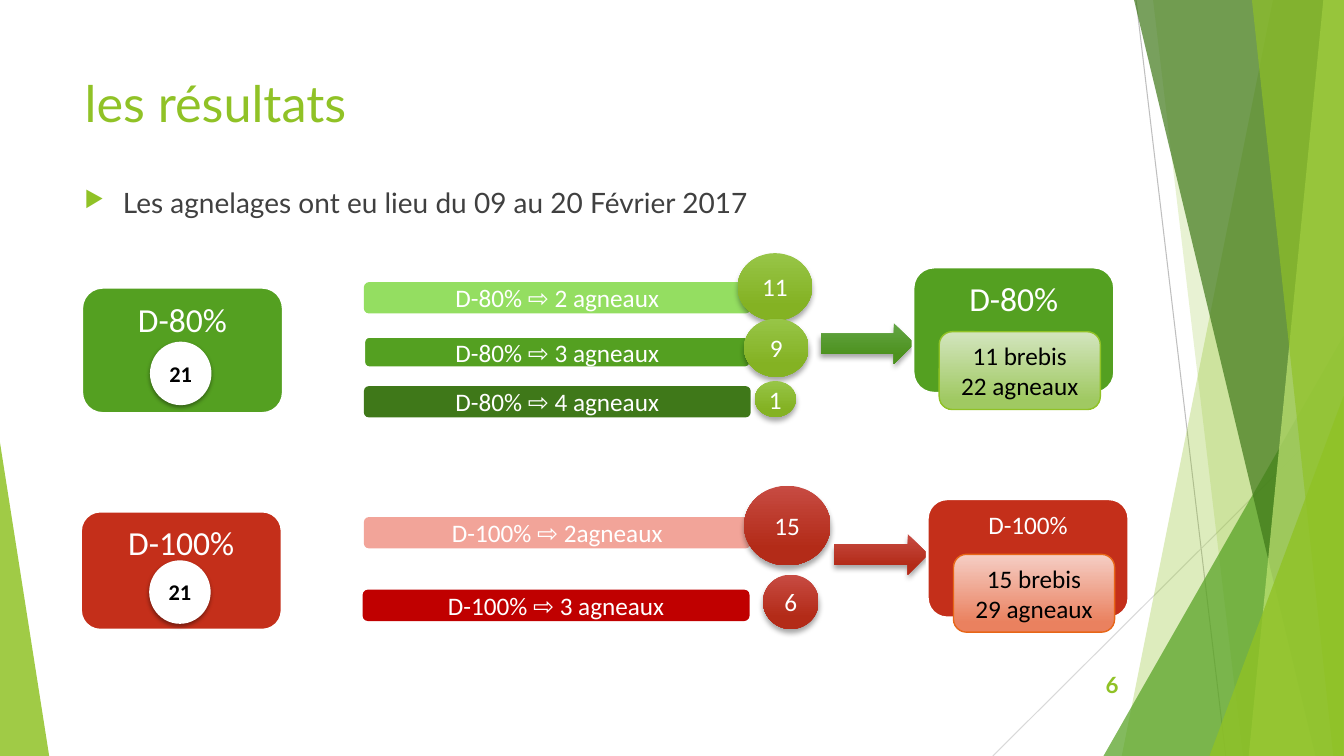
import dataclasses

import pptx
import pptx.dml.color
import pptx.enum.shapes
import pptx.enum.text
import pptx.oxml
import pptx.oxml.ns
import pptx.util
from lxml import etree

Cm, Pt = pptx.util.Cm, pptx.util.Pt
RGB = pptx.dml.color.RGBColor.from_string
qn = pptx.oxml.ns.qn
Shape = pptx.enum.shapes.MSO_SHAPE
Align = pptx.enum.text.PP_ALIGN
Anchor = pptx.enum.text.MSO_ANCHOR


@dataclasses.dataclass(frozen=True)
class Theme:
    heading_font: str = "Lato"
    label_font: str = "Calibri"
    white: str = "FFFFFF"
    black: str = "000000"
    ink: str = "404040"
    lime: str = "90C226"
    pale_lime: str = "C0E474"
    green: str = "54A021"
    dark_green: str = "3F7819"
    light_green: str = "94DE61"
    red: str = "C42F1A"
    pale_red: str = "F2A499"
    deep_red: str = "C00000"
    orange: str = "E76618"
    lime_shade: tuple = (("97C547", 0), ("84B223", 0.78))
    green_shade: tuple = (("63A545", 0), ("4D921E", 0.78))
    red_shade: tuple = (("C74B42", 0), ("B32B18", 0.78))
    lime_tint: tuple = (("D3E5BE", 0), ("A0C962", 0.88))
    orange_tint: tuple = (("F5CEC5", 0), ("EA815F", 0.88))
    heading: int = 36
    card: int = 24
    body: int = 20
    label: int = 18
    small: int = 16


theme = Theme()
# Shadows: opacity %, blur and distance in points
soft_shadow = (38, 3.1, 1.6)
deep_shadow = (35, 4, 3)


def write_text(shape, text, font=theme.label_font, size=theme.label, color=theme.white,
               bold=False, align=Align.CENTER, anchor=Anchor.MIDDLE, wrap=True):
    frame = shape.text_frame
    frame.auto_size = pptx.enum.text.MSO_AUTO_SIZE.NONE
    frame.word_wrap = wrap
    frame.vertical_anchor = anchor
    for index, line in enumerate(text.split("\n")):
        para = frame.paragraphs[0] if index == 0 else frame.add_paragraph()
        para.alignment = align
        span = para.add_run()
        span.text = line
        span.font.name, span.font.size, span.font.bold = font, Pt(size), bold
        span.font.color.rgb = RGB(color)


def add_block(kind, place, fill, opacity=100, line=None, line_width=2, shadow=None):
    """Add a preset shape at place, or a freeform through a list of points."""
    if kind == "outline":
        points = [(Cm(x), Cm(y)) for x, y in place]
        builder = page.shapes.build_freeform(*points[0])
        builder.add_line_segments(points[1:], close=True)
        shape = builder.convert_to_shape()
    else:
        shape = page.shapes.add_shape(kind, *map(Cm, place))
    if isinstance(fill, tuple):
        shape.fill.gradient()
        shape.fill.gradient_angle = 270
        for stop, (color, position) in zip(shape.fill.gradient_stops, fill):
            stop.color.rgb, stop.position = RGB(color), position
    else:
        shape.fill.solid()
        shape.fill.fore_color.rgb = RGB(fill)
    properties = shape.element.spPr
    if opacity < 100:
        color_node = properties.find(".//" + qn("a:srgbClr"))
        etree.SubElement(color_node, qn("a:alpha"), val=str(opacity * 1000))
    if line:
        shape.line.color.rgb = RGB(line)
        shape.line.width = Pt(line_width)
    else:
        shape.line.fill.background()
    shape.shadow.inherit = False
    if shadow:
        alpha, blur, distance = shadow
        outer = etree.SubElement(
            properties.find(qn("a:effectLst")), qn("a:outerShdw"), blurRad=str(Pt(blur)),
            dist=str(Pt(distance)), dir="5400000", rotWithShape="0")
        color_node = etree.SubElement(outer, qn("a:srgbClr"), val=theme.black)
        etree.SubElement(color_node, qn("a:alpha"), val=str(alpha * 1000))
    return shape


# Slide
width, height = 33.87, 19.05
deck = pptx.Presentation()
deck.slide_width, deck.slide_height = Cm(width), Cm(height)
page = deck.slides.add_slide(deck.slide_layouts[5])

# Thin lines behind the facets
for start_x, start_y, end_x, color in ((28.63, 0, 30.89, "BFBFBF"), (width, 10.24, 25.02, "D9D9D9")):
    thread = page.shapes.add_connector(
        pptx.enum.shapes.MSO_CONNECTOR.STRAIGHT, Cm(start_x), Cm(start_y), Cm(end_x), Cm(height))
    thread.line.color.rgb = RGB(color)
    thread.line.width = Pt(0.75)
    etree.SubElement(thread.element.spPr, qn("a:effectLst"))

# Facets: bands give top and bottom x, triangles give left, top, width and apex
facets = (
    ((32.08, 28.27), theme.lime, 30),
    ((29.06, 31.32), theme.lime, 20),
    ((27.81, 8.46, 6.05, 1), theme.green, 72),
    ((28.58, 33.15), theme.dark_green, 70),
    ((33.35, 31.47), theme.pale_lime, 70),
    ((31.55, 33.6), theme.lime, 65),
    ((30.48, 9.98, 3.38, 1), theme.lime, 80),
    ((0, 11.15, 1.24, 0), theme.lime, 85),
)
for place, color, opacity in facets:
    if len(place) == 2:
        top_x, bottom_x = place
        corners = [(top_x, 0), (width, 0), (width, height), (bottom_x, height)]
        add_block("outline", corners, color, opacity)
    else:
        left, top, base, apex = place
        triangle = add_block(Shape.ISOSCELES_TRIANGLE, (left, top, base, height - top), color, opacity)
        triangle.adjustments[0] = apex

# Title
title = page.shapes.title
title.left, title.top, title.width, title.height = map(Cm, (1.88, 1.7, 23.88, 3.66))
write_text(title, "les résultats", font=theme.heading_font, size=theme.heading,
           color=theme.lime, align=Align.LEFT, anchor=Anchor.TOP)

# Bulleted sentence
sentence = page.shapes.add_textbox(*map(Cm, (1.88, 4.55, 23.88, 1.7)))
write_text(sentence, "Les agnelages ont eu lieu du 09 au 20 Février 2017", font=theme.heading_font,
           size=theme.body, color=theme.ink, align=Align.LEFT, anchor=Anchor.TOP)
bullet = sentence.text_frame.paragraphs[0]._p.get_or_add_pPr()
bullet.set("marL", str(Cm(0.97)))
bullet.set("indent", str(-Cm(0.97)))
bullet_color = etree.SubElement(bullet, qn("a:buClr"))
etree.SubElement(bullet_color, qn("a:srgbClr"), val=theme.lime)
etree.SubElement(bullet, qn("a:buSzPct"), val="80000")
etree.SubElement(bullet, qn("a:buChar"), char="▶")

# Slide number
number = page.shapes.add_textbox(*map(Cm, (26.54, 16.74, 1.9, 1.02)))
write_text(number, "6", font=theme.heading_font, size=theme.small, color=theme.lime,
           bold=True, align=Align.RIGHT)

# Treatments: bars hold text, left, top, fill, outline; counters hold text and place
treatments = (
    dict(name="D-80%", color=theme.green, card_height=3.18,
         bars=(("D-80% ⇨ 3 agneaux", 9.17, 8.48, theme.green, theme.white),
               ("D-80% ⇨ 2 agneaux", 9.17, 7.11, theme.light_green, None),
               ("D-80% ⇨ 4 agneaux", 9.17, 9.73, theme.dark_green, None)),
         counters=(("11", 18.59, 6.38, 1.88, 1.7), ("9", 18.75, 8.03, 1.63, 1.47),
                   ("1", 19.02, 9.6, 1.04, 0.91)),
         counter_fill=theme.lime_shade, start=(2.06, 7.24), ewes=(3.78, 8.61),
         arrow=(20.68, 8.15), arrow_fill=theme.green_shade,
         result=(23.01, 6.73), result_size=theme.card, tally=(23.67, 8.36),
         tally_text="11 brebis\n22 agneaux", tally_fill=theme.lime_tint, tally_line=theme.lime),
    dict(name="D-100%", color=theme.red, card_height=3,
         bars=(("D-100% ⇨ 2agneaux", 9.17, 13.03, theme.pale_red, None),
               ("D-100% ⇨ 3 agneaux", 9.14, 14.86, theme.deep_red, None)),
         counters=(("15", 18.75, 12.24, 2.18, 2.01), ("6", 19.23, 14.48, 1.4, 1.37)),
         counter_fill=theme.red_shade, start=(2.03, 12.88), ewes=(3.76, 14.12),
         arrow=(21.03, 13.46), arrow_fill=theme.red_shade,
         result=(23.37, 12.57), result_size=theme.label, tally=(24.03, 13.97),
         tally_text="15 brebis\n29 agneaux", tally_fill=theme.orange_tint, tally_line=theme.orange),
)
for group in treatments:
    # Litter bars and their counters
    for text, left, top, fill, outline in group["bars"]:
        bar = add_block(Shape.ROUNDED_RECTANGLE, (left, top, 9.75, 0.79), fill, line=outline)
        write_text(bar, text)
    for text, *place in group["counters"]:
        counter = add_block(Shape.OVAL, place, group["counter_fill"], shadow=deep_shadow)
        write_text(counter, text, wrap=False)

    # Arrow towards the result
    add_block(Shape.RIGHT_ARROW, (*group["arrow"], 2.36, 1.02), group["arrow_fill"], shadow=deep_shadow)

    # Starting and result cards
    for corner, size in ((group["start"], theme.card), (group["result"], group["result_size"])):
        card = add_block(Shape.ROUNDED_RECTANGLE, (*corner, 5.08, group["card_height"]),
                         group["color"], line=theme.white)
        write_text(card, group["name"], size=size, anchor=Anchor.TOP)

    # Ewe count and tally on the cards
    ewes = add_block(Shape.OVAL, (*group["ewes"], 1.55, 1.6), theme.white, shadow=soft_shadow)
    write_text(ewes, "21", size=theme.small, color=theme.black, bold=True, wrap=False)
    tally = add_block(Shape.ROUNDED_RECTANGLE, (*group["tally"], 4.06, 1.96), group["tally_fill"],
                      line=group["tally_line"], line_width=1)
    write_text(tally, group["tally_text"], color=theme.black)

deck.save("out.pptx")
